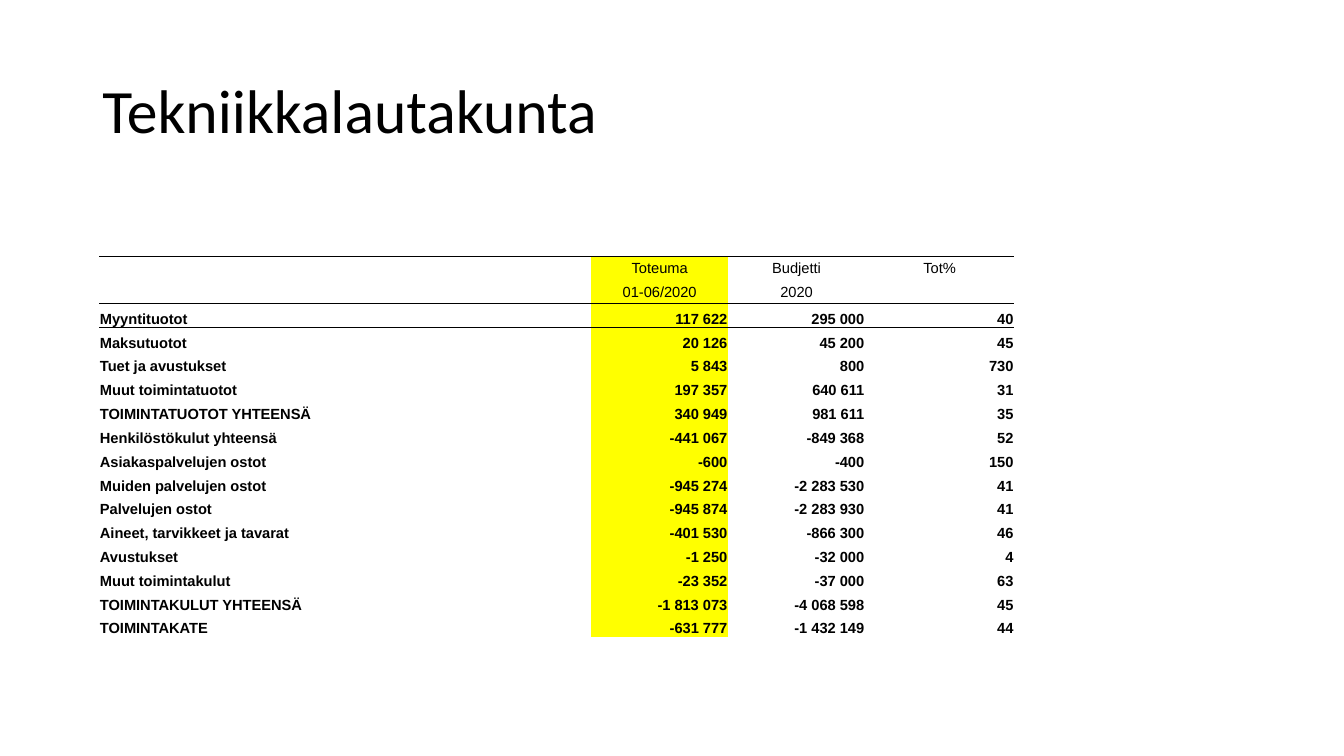
from lxml.etree import SubElement
from pptx import Presentation
from pptx.dml.color import RGBColor
from pptx.enum.text import MSO_ANCHOR as ANCHOR, PP_ALIGN as ALIGN
from pptx.oxml import parse_xml
from pptx.oxml.ns import qn
from pptx.util import Cm, Pt

TITLE = "Tekniikkalautakunta"
HEADER = [
    ("", "Toteuma", "Budjetti", "Tot%"),
    ("", "01-06/2020", "2020", ""),
]
ROWS = [
    ("Myyntituotot", "117 622", "295 000", "40"),
    ("Maksutuotot", "20 126", "45 200", "45"),
    ("Tuet ja avustukset", "5 843", "800", "730"),
    ("Muut toimintatuotot", "197 357", "640 611", "31"),
    ("TOIMINTATUOTOT YHTEENSÄ", "340 949", "981 611", "35"),
    ("Henkilöstökulut yhteensä", "-441 067", "-849 368", "52"),
    ("Asiakaspalvelujen ostot", "-600", "-400", "150"),
    ("Muiden palvelujen ostot", "-945 274", "-2 283 530", "41"),
    ("Palvelujen ostot", "-945 874", "-2 283 930", "41"),
    ("Aineet, tarvikkeet ja tavarat", "-401 530", "-866 300", "46"),
    ("Avustukset", "-1 250", "-32 000", "4"),
    ("Muut toimintakulut", "-23 352", "-37 000", "63"),
    ("TOIMINTAKULUT YHTEENSÄ", "-1 813 073", "-4 068 598", "45"),
    ("TOIMINTAKATE", "-631 777", "-1 432 149", "44"),
]
COL_WIDTHS = [12.4, 3.45, 3.45, 3.76]
ROW_HEIGHT = 0.6
ACTUAL_COL = 1
RULES = {0: "lnT", 1: "lnB", 2: "lnT"}
BLACK, YELLOW = "000000", "FFFF00"
NO_STYLE = "{2D5ABB26-0587-4C30-8999-92F81FD0307C}"
NS = "http://schemas.openxmlformats.org/drawingml/2006/main"


def color(value):
    return RGBColor.from_string(value)


def set_font(p, name, size, bold=False):
    p.font.name = name
    p.font.size = Pt(size)
    p.font.bold = bold
    p.font.color.rgb = color(BLACK)


def add_rule(cell, side):
    ln = parse_xml(f'<a:{side} xmlns:a="{NS}" w="{Pt(0.5)}"/>')
    fill = SubElement(ln, qn("a:solidFill"))
    SubElement(fill, qn("a:srgbClr"), val=BLACK)
    cell._tc.get_or_add_tcPr().insert(0, ln)


def add_title(slide):
    tf = slide.shapes.add_textbox(Cm(2.33), Cm(1.01), Cm(29.21), Cm(3.68)).text_frame
    tf.word_wrap = True
    tf.vertical_anchor = ANCHOR.MIDDLE
    p = tf.paragraphs[0]
    p.text = TITLE
    p.line_spacing = 0.9
    set_font(p, "Calibri", 44)


def fill_cell(cell, text, row, col):
    is_header = row < len(HEADER)
    cell.margin_left = cell.margin_right = cell.margin_top = Cm(0.02)
    cell.margin_bottom = 0
    cell.vertical_anchor = ANCHOR.MIDDLE if is_header else ANCHOR.BOTTOM
    if col == ACTUAL_COL:
        cell.fill.solid()
        cell.fill.fore_color.rgb = color(YELLOW)
    else:
        cell.fill.background()
    p = cell.text_frame.paragraphs[0]
    p.text = text
    if is_header:
        p.alignment = ALIGN.CENTER
    else:
        p.alignment = ALIGN.RIGHT if col else ALIGN.LEFT
    set_font(p, "Arial", 10.5, not is_header)
    if row in RULES:
        add_rule(cell, RULES[row])


def add_budget_table(slide):
    data = HEADER + ROWS
    table = slide.shapes.add_table(
        len(data), len(COL_WIDTHS), Cm(2.5), Cm(6.45),
        Cm(sum(COL_WIDTHS)), Cm(ROW_HEIGHT * len(data))).table
    table.first_row = table.horz_banding = False
    table._tbl.tblPr.find(qn("a:tableStyleId")).text = NO_STYLE
    for column, width in zip(table.columns, COL_WIDTHS):
        column.width = Cm(width)
    for i, values in enumerate(data):
        table.rows[i].height = Cm(ROW_HEIGHT)
        for j, text in enumerate(values):
            fill_cell(table.cell(i, j), text, i, j)


def main():
    prs = Presentation()
    prs.slide_width, prs.slide_height = Cm(33.87), Cm(19.05)
    slide = prs.slides.add_slide(prs.slide_layouts[6])
    add_title(slide)
    add_budget_table(slide)
    prs.save("out.pptx")


if __name__ == "__main__":
    main()
